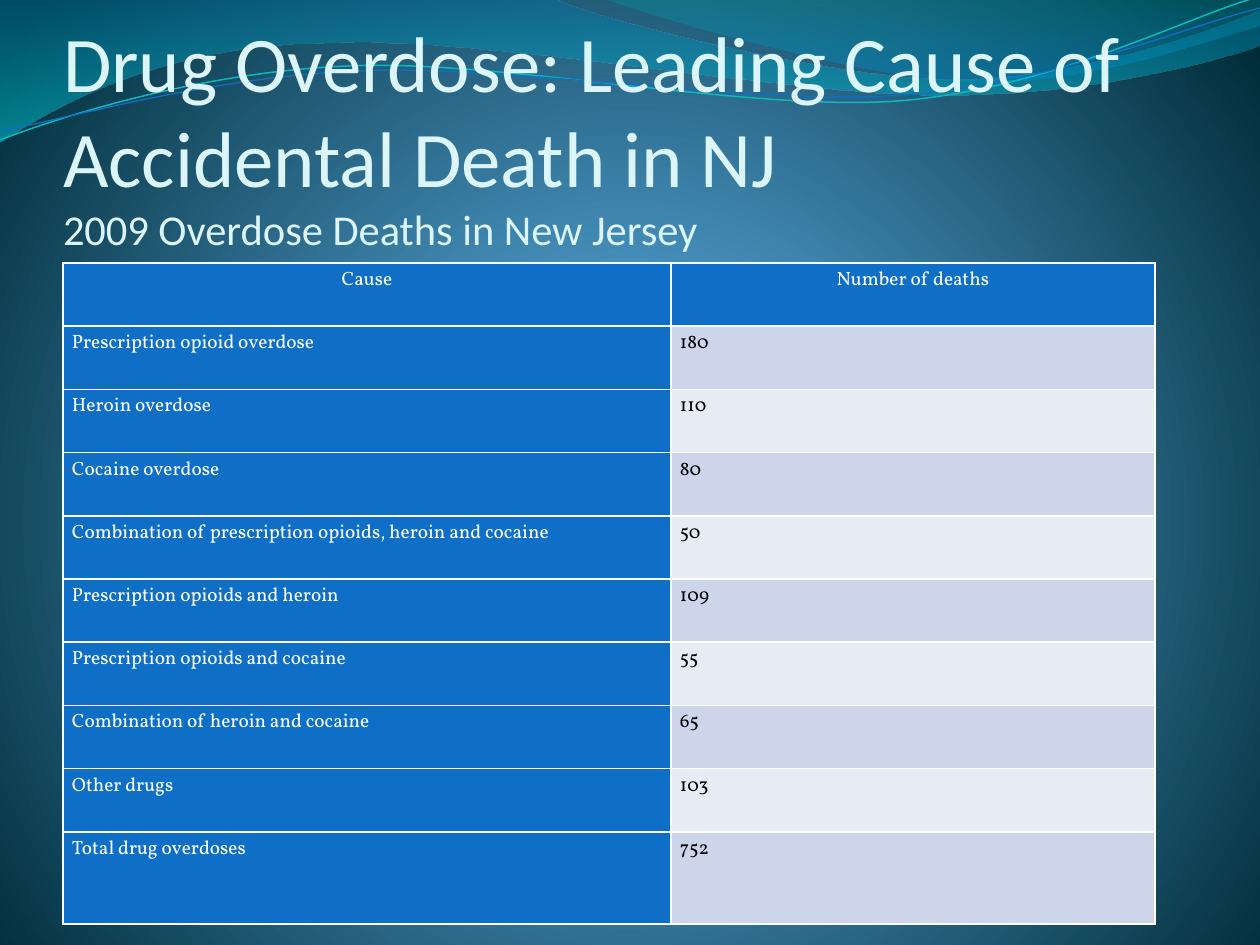
from math import cos, radians, sin
from pptx import Presentation
from pptx.dml.color import RGBColor
from pptx.enum.text import MSO_ANCHOR, MSO_AUTO_SIZE, PP_ALIGN
from pptx.oxml import parse_xml
from pptx.oxml.ns import nsdecls, qn
from pptx.util import Pt

PX = 914400 / 126
COLORS = {
    "title": "DBF5F9", "blue": "0F6FC6", "teal": "0AB8BF", "white": "FFFFFF",
    "black": "000000", "odd": "CCD5EA", "even": "E7EBF5",
}
COLORS = {name: RGBColor.from_string(value) for name, value in COLORS.items()}
GRADIENTS = {
    "sky": [(0, "4AA0D6", 100), (25, "4C98C7", 100), (100, "002C38", 100)],
    "wide": [(0, "0074A1", 45), (100, "00C6CF", 55)],
    "right": [(0, "00A1A9", 30), (80, "008BBF", 45)],
}
LINEAR = '<a:lin ang="5400000" scaled="1"/>'
CIRCLE = ('<a:path path="circle">'
          '<a:fillToRect l="10000" t="110000" r="10000" b="100000"/></a:path>')


def set_gradient(fill, props, stops, shade):
    fill.solid()
    gs = "".join(
        f'<a:gs pos="{pos * 1000}"><a:srgbClr val="{color}">'
        f'<a:alpha val="{alpha * 1000}"/></a:srgbClr></a:gs>'
        for pos, color, alpha in stops)
    grad = parse_xml(f'<a:gradFill {nsdecls("a")} rotWithShape="1">'
                     f'<a:gsLst>{gs}</a:gsLst>{shade}</a:gradFill>')
    props.replace(props.find(qn("a:solidFill")), grad)


def add_wave(shapes, start, segments, close=False, tilt=0, center=(0, 0)):
    a = radians(tilt)
    cx, cy = center
    curves = [
        [(round((cx + (x - cx) * cos(a) - (y - cy) * sin(a)) * PX),
          round((cy + (x - cx) * sin(a) + (y - cy) * cos(a)) * PX))
         for x, y in zip(seg[::2], seg[1::2])]
        for seg in [start, *segments]]
    fb = shapes.build_freeform(*curves[0][0])
    fb.add_line_segments([pts[-1] for pts in curves[1:]], close=close)
    sp = fb.convert_to_shape()
    lines = list(sp.element.iter(qn("a:lnTo")))
    for line, pts in zip(lines, curves[1:]):
        if len(pts) == 3:
            xml = "".join(f'<a:pt x="{x - sp.left}" y="{y - sp.top}"/>'
                          for x, y in pts)
            line.getparent().replace(line, parse_xml(
                f'<a:cubicBezTo {nsdecls("a")}>{xml}</a:cubicBezTo>'))
    sp.rotation = -tilt
    sp.shadow.inherit = False
    return sp


prs = Presentation()
prs.slide_width, prs.slide_height = round(1260 * PX), round(945 * PX)
s = prs.slides.add_slide(prs.slide_layouts[5])
fill = s.background.fill
fill.solid()
set_gradient(fill, s.element.find(".//" + qn("p:bgPr")), GRADIENTS["sky"], CIRCLE)

bands = [
    ("wide", (0, 0), [
        (554, -1), (600, 21, 837, 79, 955, 79), (1074, 79, 1207, 33, 1260, 11),
        (1261, 45), (1239, 55, 1096, 96, 940, 95), (784, 95, 481, 35, 324, 43),
        (163, 45, 58, 105, -1, 142)]),
    ("right", (604, -1), [
        (641, 14, 859, 78, 969, 82), (1079, 87, 1211, 40, 1260, 26), (1260, 0)]),
]
for name, start, segments in bands:
    sp = add_wave(s.shapes, start, segments, close=True)
    set_gradient(sp.fill, sp.element.spPr, GRADIENTS[name], LINEAR)
    sp.line.fill.background()

strands = [
    ("teal", 0.85, (0, 140), [
        (60, 117, 199, 72, 349, 66), (498, 59, 747, 112, 898, 101),
        (1050, 89, 1182, 19, 1257, -3)]),
    ("blue", 0.75, (0, 131), [
        (59, 121, 207, 77, 357, 71), (508, 64, 752, 106, 903, 95),
        (1053, 84, 1186, 26, 1260, 8)]),
]
for name, width, start, segments in strands:
    sp = add_wave(s.shapes, start, segments, tilt=2.7, center=(629, 73))
    sp.fill.background()
    sp.line.color.rgb = COLORS[name]
    sp.line.width = Pt(width)

title = s.shapes.title
s.shapes.element.append(title.element)
title.left, title.top, title.width, title.height = [
    round(v * PX) for v in (63, 97, 1134, 157)]
tf = title.text_frame
tf.text = ("Drug Overdose: Leading Cause of Accidental Death in NJ\v"
           "2009 Overdose Deaths in New Jersey")
tf.word_wrap = True
tf.auto_size = MSO_AUTO_SIZE.NONE
tf.vertical_anchor = MSO_ANCHOR.BOTTOM
tf.margin_left = tf.margin_right = tf.margin_bottom = 0
p = tf.paragraphs[0]
p.alignment = PP_ALIGN.LEFT
for r, size in zip(p.runs, (45, 24.3)):
    r.font.size = Pt(size)
    r.font.name = "Calibri"
    r.font.color.rgb = COLORS["title"]

rows = [
    ("Cause", "Number of deaths"),
    ("Prescription opioid overdose", "180"),
    ("Heroin overdose", "110"),
    ("Cocaine overdose", "80"),
    ("Combination of prescription opioids, heroin and cocaine", "50"),
    ("Prescription opioids and heroin", "109"),
    ("Prescription opioids and cocaine", "55"),
    ("Combination of heroin and cocaine", "65"),
    ("Other drugs", "103"),
    ("Total drug overdoses", "752"),
]
last = len(rows) - 1
table = s.shapes.add_table(
    len(rows), 2, *[round(v * PX) for v in (63, 263, 1092, 661)]).table
for col, width in zip(table.columns, (608, 484)):
    col.width = round(width * PX)
for i, row in enumerate(rows):
    table.rows[i].height = round((92 if i == last else 569 / last) * PX)
    for j, text in enumerate(row):
        is_header = i == 0
        is_value = j == 1 and not is_header
        cell = table.cell(i, j)
        cell.margin_left = cell.margin_right = round(9 * PX)
        cell.margin_top = cell.margin_bottom = 0
        cell.fill.solid()
        band = "odd" if i % 2 else "even"
        cell.fill.fore_color.rgb = COLORS[band if is_value else "blue"]
        p = cell.text_frame.paragraphs[0]
        p.text = text
        p.alignment = PP_ALIGN.CENTER if is_header else PP_ALIGN.LEFT
        p.line_spacing = 1.15
        p.space_after = Pt(10)
        font = p.runs[0].font
        font.size = Pt(11)
        font.name = "Vollkorn"
        font.bold = False
        font.color.rgb = COLORS["black" if is_value else "white"]

prs.save("out.pptx")
